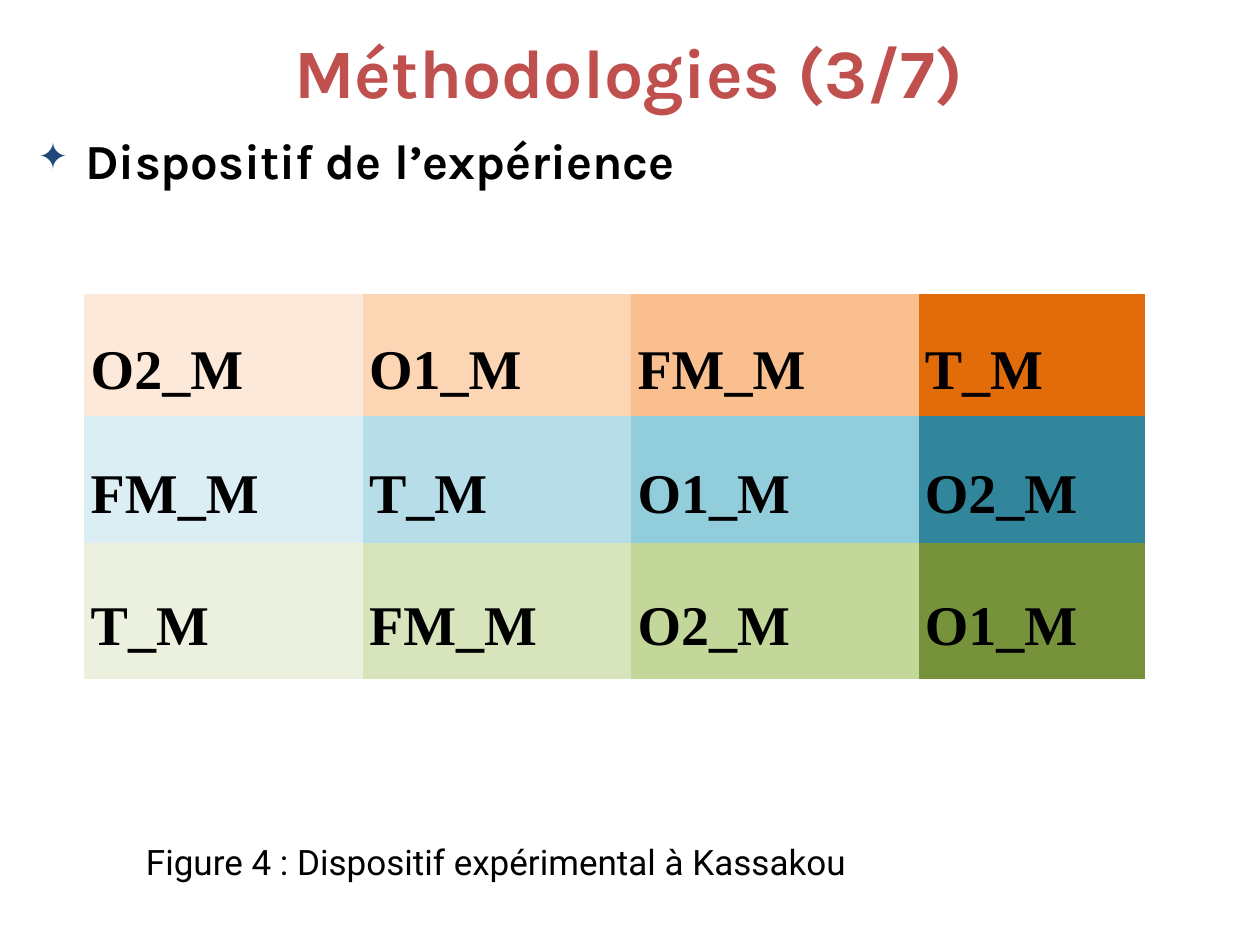
from lxml.etree import SubElement
from pptx import Presentation
from pptx.dml.color import RGBColor
from pptx.enum.text import MSO_ANCHOR, MSO_AUTO_SIZE, PP_ALIGN
from pptx.oxml.ns import qn
from pptx.util import Inches, Pt

COLORS = {
    "title": "C0504D",
    "text": "000000",
    "bullet": "1F497D",
    "orange": ["FDE9D9", "FCD5B4", "FABF8F", "E26B0A"],
    "blue": ["DAEEF3", "B7DEE8", "92CDDC", "31869B"],
    "green": ["EBF1DE", "D8E4BC", "C4D79B", "76933C"],
}
PLOTS = [
    ("orange", ["O2_M", "O1_M", "FM_M", "T_M"]),
    ("blue", ["FM_M", "T_M", "O1_M", "O2_M"]),
    ("green", ["T_M", "FM_M", "O2_M", "O1_M"]),
]
NO_STYLE = "{2D5ABB26-0587-4C30-8999-92F81FD0307C}"


class SlideBuilder:
    COLS, ROWS = 100, 75
    HEADING, BODY, TABLE = "Karla", "Roboto", "Times New Roman"

    def __init__(self, prs):
        self.prs = prs
        self.s = prs.slides.add_slide(prs.slide_layouts[5])

    def x(self, cols):
        return round(self.prs.slide_width * cols / self.COLS)

    def y(self, rows):
        return round(self.prs.slide_height * rows / self.ROWS)

    def box(self, left, top, width, height):
        return self.x(left), self.y(top), self.x(width), self.y(height)

    def set_text(self, tf, text, font, size, color="text", bold=False):
        tf.text = text
        p = tf.paragraphs[0]
        f = p.runs[0].font
        f.name, f.size, f.bold = font, Pt(size), bold
        f.color.rgb = RGBColor.from_string(COLORS[color])
        return p

    def title(self, text, *area):
        sp = self.s.shapes.title
        sp.left, sp.top, sp.width, sp.height = self.box(*area)
        tf = sp.text_frame
        tf.auto_size = MSO_AUTO_SIZE.NONE
        tf.vertical_anchor = MSO_ANCHOR.MIDDLE
        p = self.set_text(tf, text, self.HEADING, 39.6, "title", True)
        p.alignment = PP_ALIGN.CENTER

    def text_box(self, *area):
        tf = self.s.shapes.add_textbox(*self.box(*area)).text_frame
        tf.word_wrap = True
        return tf

    def bullet(self, text, *area):
        p = self.set_text(self.text_box(*area), text, self.HEADING, 28, bold=True)
        p.space_before = Pt(5.6)
        pPr = p._p.get_or_add_pPr()
        indent = self.x(3.8)
        pPr.set("marL", str(indent))
        pPr.set("indent", str(-indent))
        color = SubElement(pPr, qn("a:buClr"))
        SubElement(color, qn("a:srgbClr"), val=COLORS["bullet"])
        SubElement(pPr, qn("a:buSzPct"), val="75000")
        SubElement(pPr, qn("a:buChar"), char="✦")

    def caption(self, text, *area):
        tf = self.text_box(*area)
        tf.auto_size = MSO_AUTO_SIZE.SHAPE_TO_FIT_TEXT
        self.set_text(tf, text, self.BODY, 20)

    def table(self, plots, left, top, widths, heights):
        area = self.box(left, top, sum(widths), sum(heights))
        table = self.s.shapes.add_table(len(heights), len(widths), *area).table
        table.first_row = table.horz_banding = False
        table._tbl.tblPr.find(qn("a:tableStyleId")).text = NO_STYLE
        for column, width in zip(table.columns, widths):
            column.width = self.x(width)
        for row, height, (hue, labels) in zip(table.rows, heights, plots):
            row.height = self.y(height)
            for cell, label, fill in zip(row.cells, labels, COLORS[hue]):
                self.cell(cell, label, fill)

    def cell(self, cell, label, fill):
        cell.fill.solid()
        cell.fill.fore_color.rgb = RGBColor.from_string(fill)
        cell.vertical_anchor = MSO_ANCHOR.MIDDLE
        cell.margin_left = cell.margin_right = self.x(0.5)
        cell.margin_top = cell.margin_bottom = 0
        p = self.set_text(cell.text_frame, label, self.TABLE, 32, bold=True)
        p.alignment = PP_ALIGN.JUSTIFY
        p.line_spacing = 1.5


def main():
    prs = Presentation()
    prs.slide_width, prs.slide_height = Inches(10), Inches(7.5)
    slide = SlideBuilder(prs)
    slide.title("Méthodologies (3/7)", 7.4, 2.1, 85, 7.1)
    slide.bullet("Dispositif de l’expérience", 2, 9.9, 93.7, 22)
    slide.table(PLOTS, 6.7, 23.3, [22.1, 21.3, 22.8, 18], [9.7, 10.1, 10.8])
    slide.caption("Figure 4 : Dispositif expérimental à Kassakou", 10.6, 66.2, 68.5, 4.4)
    prs.save("out.pptx")


if __name__ == "__main__":
    main()
